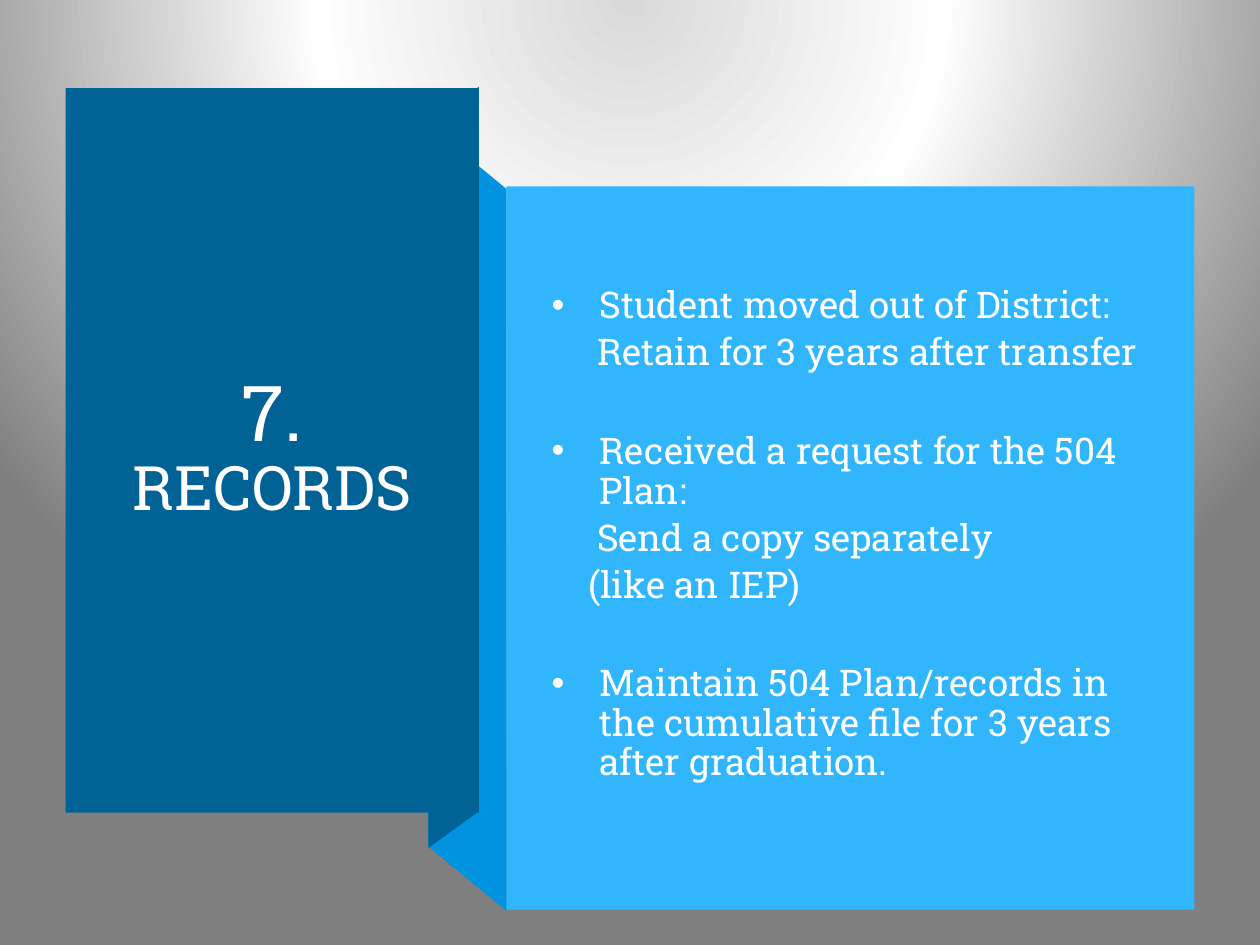
from typing import NamedTuple

from pptx import Presentation
from pptx.dml.color import RGBColor
from pptx.enum.shapes import MSO_SHAPE
from pptx.enum.text import MSO_ANCHOR, PP_ALIGN
from pptx.oxml import parse_xml
from pptx.oxml.ns import nsdecls
from pptx.util import Inches, Pt

RECTANGLE = MSO_SHAPE.RECTANGLE
MIDDLE = MSO_ANCHOR.MIDDLE
CENTER = PP_ALIGN.CENTER

DARK_BLUE = RGBColor(0x01, 0x62, 0x96)
MID_BLUE = RGBColor(0x02, 0x93, 0xE0)
LIGHT_BLUE = RGBColor(0x31, 0xB6, 0xFD)
WHITE = RGBColor(0xFF, 0xFF, 0xFF)
OFF_WHITE = RGBColor(0xFE, 0xFF, 0xFF)

FONT = "Roboto Slab"
LINE_SPACING = 0.9
BULLET_INDENT = 0.38
ITEM_GAP = 4.2
GROUP_GAP = 33.6

BACKGROUND_STOPS = [(0, "D9D9D9"), (40, "FEFEFE"), (100, "7F7F7F")]


class Box(NamedTuple):
    left: float
    top: float
    width: float
    height: float


class Fold(NamedTuple):
    points: list[tuple[float, float]]
    color: RGBColor


class Line(NamedTuple):
    text: str
    bullet: bool
    indent: float
    space_before: float


FOLDS = [
    Fold([(4.02, 7.23), (3.4, 6.72), (3.4, 0.99), (4.02, 1.5)], MID_BLUE),
    Fold([(3.8, 6.44), (3.4, 6.73), (3.4, 0.98), (3.8, 0.69)], DARK_BLUE),
]
TITLE_PANEL = Box(0.52, 0.7, 3.28, 5.75)
TITLE_BOX = Box(0.77, 1.07, 2.78, 4.99)
BODY_PANEL = Box(4.02, 1.48, 5.46, 5.74)
BODY_BOX = Box(4.28, 1.88, 4.88, 4.74)

TITLE_RUNS = [("7. ", 44), ("RECORDS", 35)]
BODY_LINES = [
    Line("Student moved out of District:", True, BULLET_INDENT, 0),
    Line("Retain for 3 years after transfer", False, 0.36, ITEM_GAP),
    Line("Received a request for the 504 Plan:", True, BULLET_INDENT, GROUP_GAP),
    Line("Send a copy separately", False, 0.36, ITEM_GAP),
    Line("(like an IEP)", False, 0.29, ITEM_GAP),
    Line("Maintain 504 Plan/records in the cumulative file for 3 years "
         "after graduation.", True, BULLET_INDENT, GROUP_GAP),
]


def set_background(slide) -> None:
    stops = "".join(
        f'<a:gs pos="{position * 1000}"><a:srgbClr val="{color}"/></a:gs>'
        for position, color in BACKGROUND_STOPS
    )
    background = parse_xml(
        f'<p:bg {nsdecls("p", "a")}><p:bgPr><a:gradFill rotWithShape="1">'
        f'<a:gsLst>{stops}</a:gsLst><a:path path="circle">'
        '<a:fillToRect l="50000" t="-80000" r="50000" b="180000"/></a:path>'
        '</a:gradFill><a:effectLst/></p:bgPr></p:bg>'
    )
    slide.element.cSld.insert(0, background)


def paint(shape, color: RGBColor) -> None:
    shape.fill.solid()
    shape.fill.fore_color.rgb = color
    shape.line.fill.background()
    shape.shadow.inherit = False


def add_fold(slide, fold: Fold) -> None:
    start, *others = [(Inches(x), Inches(y)) for x, y in fold.points]
    builder = slide.shapes.build_freeform(*start)
    builder.add_line_segments(others, close=True)
    paint(builder.convert_to_shape(), fold.color)


def add_panel(slide, box: Box, color: RGBColor) -> None:
    paint(slide.shapes.add_shape(RECTANGLE, *map(Inches, box)), color)


def add_text_frame(slide, box: Box):
    text_frame = slide.shapes.add_textbox(*map(Inches, box)).text_frame
    text_frame.word_wrap = True
    text_frame.vertical_anchor = MIDDLE
    return text_frame


def add_title(slide) -> None:
    paragraph = add_text_frame(slide, TITLE_BOX).paragraphs[0]
    paragraph.alignment = CENTER
    paragraph.line_spacing = LINE_SPACING
    paragraph.font.name = FONT
    paragraph.font.color.rgb = WHITE
    for text, size in TITLE_RUNS:
        run = paragraph.add_run()
        run.text = text
        run.font.name = FONT
        run.font.size = Pt(size)
        run.font.color.rgb = WHITE


def add_body(slide) -> None:
    text_frame = add_text_frame(slide, BODY_BOX)
    for index, line in enumerate(BODY_LINES):
        paragraph = text_frame.add_paragraph() if index else text_frame.paragraphs[0]
        paragraph.text = line.text
        paragraph.line_spacing = LINE_SPACING
        paragraph.space_before = Pt(line.space_before)
        properties = paragraph._p.get_or_add_pPr()
        properties.set("marL", str(Inches(line.indent)))
        # Bulleted lines hang; the others start at their indent
        if line.bullet:
            properties.set("indent", str(-Inches(line.indent)))
            properties.append(parse_xml(f'<a:buFont {nsdecls("a")} typeface="Arial"/>'))
            properties.append(parse_xml(f'<a:buChar {nsdecls("a")} char="•"/>'))
        paragraph.font.name = FONT
        paragraph.font.size = Pt(21)
        paragraph.font.color.rgb = OFF_WHITE


def main() -> None:
    presentation = Presentation()
    presentation.slide_width = Inches(10)
    presentation.slide_height = Inches(7.5)
    slide = presentation.slides.add_slide(presentation.slide_layouts[6])
    set_background(slide)

    # Folded ribbon behind the panels
    for fold in FOLDS:
        add_fold(slide, fold)

    # Title panel
    add_panel(slide, TITLE_PANEL, DARK_BLUE)
    add_title(slide)

    # Body panel
    add_panel(slide, BODY_PANEL, LIGHT_BLUE)
    add_body(slide)

    presentation.save("out.pptx")


if __name__ == "__main__":
    main()
